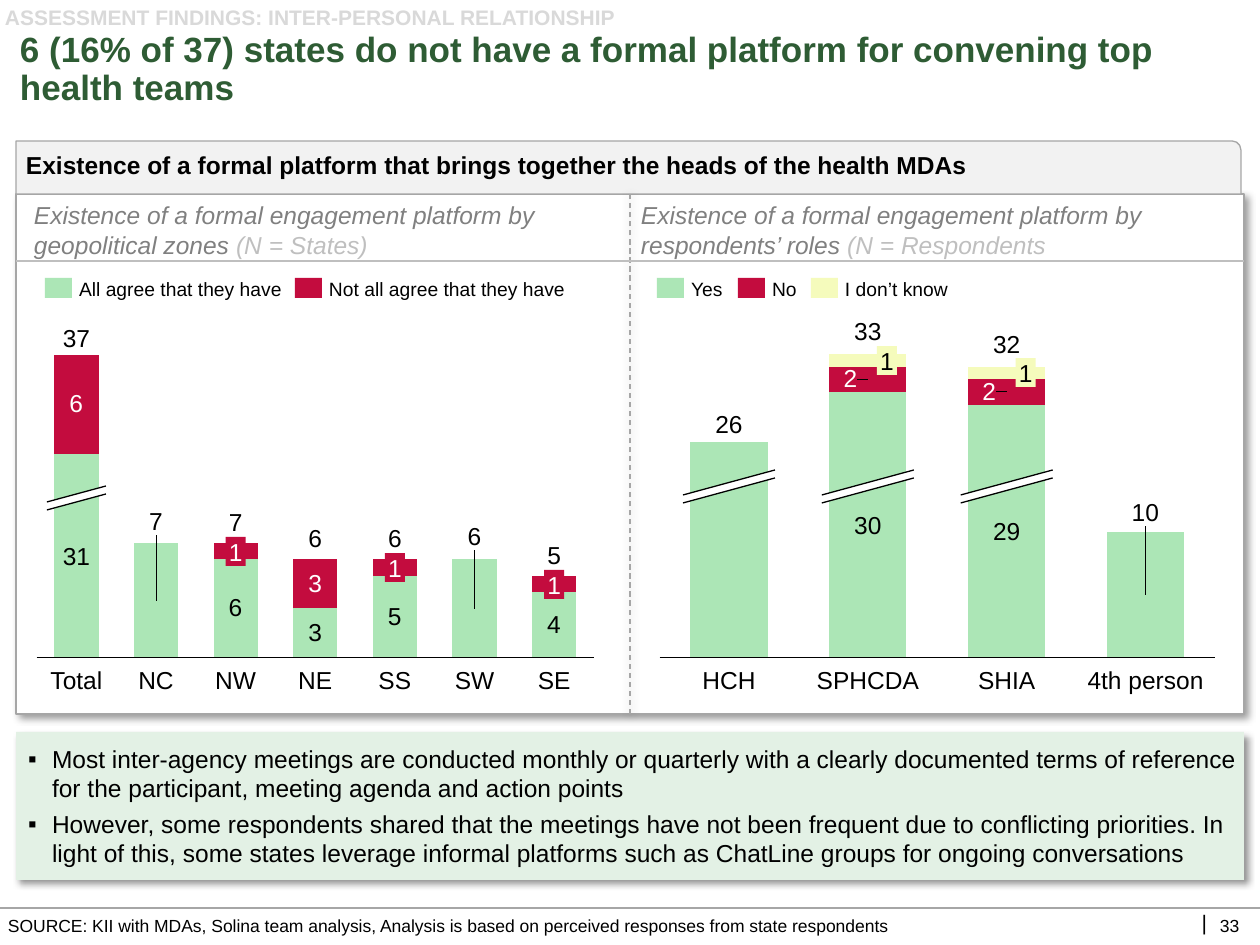
from dataclasses import dataclass

import pptx
import pptx.chart.data
import pptx.dml.color
import pptx.enum.chart
import pptx.enum.dml
import pptx.enum.shapes
import pptx.enum.text
import pptx.oxml
import pptx.oxml.ns
import pptx.util


@dataclass(frozen=True)
class Theme:
    font: str = "Arial"
    title: str = "2E5C34"
    black: str = "000000"
    white: str = "FFFFFF"
    green: str = "ACE6B6"
    red: str = "C30C3E"
    yellow: str = "F5FBBC"
    mint: str = "E3F1E5"
    header: str = "F2F2F2"
    line: str = "A6A6A6"
    pale: str = "BFBFBF"
    tag: str = "D9D9D9"
    subtitle: str = "808080"
    title_size: int = 20
    body_size: int = 14
    tag_size: int = 12
    legend_size: int = 11
    note_size: int = 10


T = Theme()
PX = 914400 / 126
SHAPES = pptx.enum.shapes.MSO_SHAPE
ANCHOR = pptx.enum.text.MSO_ANCHOR
ALIGN = pptx.enum.text.PP_ALIGN

TAG = "ASSESSMENT FINDINGS: INTER-PERSONAL RELATIONSHIP"
TITLE = "6 (16% of 37) states do not have a formal platform for convening top health teams"
HEADER = "Existence of a formal platform that brings together the heads of the health MDAs"
SOURCE = ("SOURCE: KII with MDAs, Solina team analysis, Analysis is based on "
          "perceived responses from state respondents")
BULLETS = [
    "Most inter-agency meetings are conducted monthly or quarterly with a clearly documented "
    "terms of reference for the participant, meeting agenda and action points",
    "However, some respondents shared that the meetings have not been frequent due to "
    "conflicting priorities. In light of this, some states leverage informal platforms such as "
    "ChatLine groups for ongoing conversations",
]
# Series: colour, values, labels {point: (colour, x shift, y shift)} as chart fractions.
# Notes: text, column, centre y. Chips: column, x shift, centre y.
# Breaks: columns, width, top, rise.
PANELS = [
    dict(
        subtitle=("Existence of a formal engagement platform by geopolitical zones", " (N = States)"),
        subtitle_at=(34, 200, 573, 59),
        legend=[("All agree that they have", T.green, 45), ("Not all agree that they have", T.red, 295)],
        chart_at=(25, 344, 580, 325), top=18.46,
        categories=["Total", "NC", "NW", "NE", "SS", "SW", "SE"],
        series=[
            (T.green, [12.46, 7, 6, 3, 5, 6, 4],
             {1: (T.black, 0, -0.24), 2: (T.black, 0, 0), 3: (T.black, 0, 0),
              4: (T.black, 0, 0), 5: (T.black, 0, -0.22), 6: (T.black, 0, 0)}),
            (T.red, [6, None, 1, 3, 1, None, 1], {0: (T.white, 0, 0), 3: (T.white, 0, 0)}),
        ],
        breaks=([0], 59, 486, 16),
        notes=[("37", 0, 338), ("31", 0, 556), ("7", 2, 522), ("6", 3, 538), ("6", 4, 538), ("5", 6, 555)],
        chips=[(2, 0, 551), (4, 0, 567), (6, 0, 584)], chip_colors=(T.red, T.white),
    ),
    dict(
        subtitle=("Existence of a formal engagement platform by respondents’ roles ", "(N = Respondents"),
        subtitle_at=(641, 200, 578, 59),
        legend=[("Yes", T.green, 657), ("No", T.red, 738), ("I don’t know", T.yellow, 811)],
        chart_at=(648, 343, 578, 326), top=24.14,
        categories=["HCH", "SPHCDA", "SHIA", "4th person"],
        series=[
            (T.green, [17.14, 21.14, 20.14, 10], {3: (T.black, 0, -0.25)}),
            (T.red, [None, 2, 2, None], {1: (T.white, -0.03, 0), 2: (T.white, -0.03, 0)}),
            (T.yellow, [None, 1, 1, None], {}),
        ],
        breaks=([0, 1, 2], 92, 470, 25),
        notes=[("26", 0, 424), ("33", 1, 331), ("32", 2, 344), ("30", 1, 525), ("29", 2, 531)],
        chips=[(1, 19, 360), (2, 19, 372)], chip_colors=(T.yellow, T.black),
    ),
]
PLOT = dict(x=0.02, y=0.035, w=0.961, h=0.93)


def px(*values):
    return [pptx.util.Emu(round(value * PX)) for value in values]


def rgb(value):
    return pptx.dml.color.RGBColor.from_string(value)


def xml(text):
    return pptx.oxml.parse_xml(f'<root {pptx.oxml.ns.nsdecls("a", "c")}>{text}</root>')[0]


def add_shadow(shape, blur=4, distance=3):
    shape._element.spPr.append(xml(
        f'<a:effectLst><a:outerShdw blurRad="{blur * 12700}" dist="{distance * 12700}" dir="2700000">'
        f'<a:srgbClr val="{T.black}"><a:alpha val="40000"/></a:srgbClr></a:outerShdw></a:effectLst>'))


def write(box, *paragraphs, size=T.body_size, color=T.black, bold=False, italic=False, align=ALIGN.LEFT,
          anchor=ANCHOR.MIDDLE, insets=(0, 0, 0, 0), wrap=True, bullet=None, spacing=1, before=0, after=0):
    """Fill a box; a paragraph is a string or a list of (text, colour) spans."""
    frame = box.text_frame
    frame.auto_size = pptx.enum.text.MSO_AUTO_SIZE.NONE
    frame.word_wrap, frame.vertical_anchor = wrap, anchor
    frame.margin_left, frame.margin_top, frame.margin_right, frame.margin_bottom = px(*insets)
    for index, spans in enumerate(paragraphs):
        para = frame.add_paragraph() if index else frame.paragraphs[0]
        para.alignment, para.line_spacing = align, spacing
        para.space_before = pptx.util.Pt(before if index else 0)
        para.space_after = pptx.util.Pt(after)
        if bullet:
            properties = para._p.get_or_add_pPr()
            indent = px(24)[0]
            properties.set("marL", str(indent))
            properties.set("indent", str(-indent))
            properties.append(xml(f'<a:buFont typeface="{T.font}"/>'))
            properties.append(xml(f'<a:buChar char="{bullet}"/>'))
        for text, span_color in [(spans, color)] if isinstance(spans, str) else spans:
            span = para.add_run()
            span.text = text
            span.font.name, span.font.size = T.font, pptx.util.Pt(size)
            span.font.bold, span.font.italic = bold, italic
            span.font.color.rgb = rgb(span_color)


def add_text(page, at, *paragraphs, **style):
    write(page.shapes.add_textbox(*px(*at)), *paragraphs, **style)


def paint(shape, fill, line=None):
    shape.shadow.inherit = False
    shape.fill.solid()
    shape.fill.fore_color.rgb = rgb(fill)
    if line:
        shape.line.color.rgb, shape.line.width = rgb(line), pptx.util.Pt(0.75)
    else:
        shape.line.fill.background()


def add_block(page, at, fill, line=None, kind=SHAPES.RECTANGLE):
    block = page.shapes.add_shape(kind, *px(*at))
    paint(block, fill, line)
    return block


def add_line(page, x1, y1, x2, y2, color, width=0.75, shadow=False):
    line = page.shapes.add_connector(pptx.enum.shapes.MSO_CONNECTOR.STRAIGHT, *px(x1, y1, x2, y2))
    line.line.color.rgb, line.line.width = rgb(color), pptx.util.Pt(width)
    if shadow:
        add_shadow(line, blur=5, distance=0)
    else:
        line._element.spPr.append(xml("<a:effectLst/>"))
    return line


def add_stacked_chart(page, panel):
    data = pptx.chart.data.CategoryChartData()
    data.categories = panel["categories"]
    for number, (_, values, _) in enumerate(panel["series"], 1):
        data.add_series(f"Series {number}", values)
    chart = page.shapes.add_chart(pptx.enum.chart.XL_CHART_TYPE.COLUMN_STACKED,
                                  *px(*panel["chart_at"]), data).chart
    chart.has_legend = chart.has_title = False
    chart.font.name, chart.font.size = T.font, pptx.util.Pt(T.note_size)
    chart.font.color.rgb = rgb(T.black)
    plot = chart.plots[0]
    plot.gap_width, plot.overlap, plot.vary_by_categories = 80, 100, False
    axis, scale = chart.category_axis, chart.value_axis
    axis.tick_label_position = pptx.enum.chart.XL_TICK_LABEL_POSITION.NONE
    axis.major_tick_mark = axis.minor_tick_mark = pptx.enum.chart.XL_TICK_MARK.NONE
    axis.format.line.color.rgb, axis.format.line.width = rgb(T.black), pptx.util.Pt(1)
    scale.minimum_scale, scale.maximum_scale = 0, panel["top"]
    scale.has_major_gridlines = scale.visible = False
    area = chart._chartSpace.chart.plotArea
    for old in area.findall(pptx.oxml.ns.qn("c:layout")):
        area.remove(old)
    sizes = "".join(f'<c:{key} val="{value}"/>' for key, value in PLOT.items())
    area.insert(0, xml('<c:layout><c:manualLayout><c:layoutTarget val="inner"/><c:xMode val="edge"/>'
                       f'<c:yMode val="edge"/>{sizes}</c:manualLayout></c:layout>'))
    for series, (color, _, labels) in zip(plot.series, panel["series"]):
        series.format.fill.solid()
        series.format.fill.fore_color.rgb = rgb(color)
        for point, (label_color, dx, dy) in labels.items():
            font = series.points[point].data_label.font
            font.name, font.size = T.font, pptx.util.Pt(T.body_size)
            font.color.rgb = rgb(label_color)
            if dx or dy:
                label = series._element.xpath(f"c:dLbls/c:dLbl[c:idx/@val='{point}']")[0]
                label.insert(1, xml(f'<c:layout><c:manualLayout><c:x val="{dx}"/><c:y val="{dy}"/>'
                                    '</c:manualLayout></c:layout>'))


def add_break(page, center, width, top, rise, gap=8):
    """Draw the slanted cut through a shortened column."""
    left, right = center - width / 2, center + width / 2
    outline = page.shapes.build_freeform(*px(left, top + rise), scale=1.0)
    outline.add_line_segments([px(right, top), px(right, top + gap), px(left, top + rise + gap)], close=True)
    paint(outline.convert_to_shape(), T.white)
    for shift in (0, gap):
        add_line(page, left, top + rise + shift, right, top + shift, T.black)


def add_panel(page, panel):
    name, count = panel["subtitle"]
    add_text(page, panel["subtitle_at"], [(name, T.subtitle), (count, T.pale)], italic=True)
    add_stacked_chart(page, panel)
    left, _, width, _ = panel["chart_at"]
    pitch = width * PLOT["w"] / len(panel["categories"])
    centers = [left + width * PLOT["x"] + pitch * (i + 0.5) for i in range(len(panel["categories"]))]
    columns, cut_width, top, rise = panel["breaks"]
    for column in columns:
        add_break(page, centers[column], cut_width, top, rise)
    labels = panel["notes"] + [(text, i, 680) for i, text in enumerate(panel["categories"])]
    for text, column, y in labels:
        add_text(page, (centers[column] - 60, y - 15, 120, 30), text, align=ALIGN.CENTER, wrap=False)
    fill, color = panel["chip_colors"]
    for column, shift, y in panel["chips"]:
        chip = add_block(page, (centers[column] + shift - 10, y - 14, 20, 29), fill)
        write(chip, "1", color=color, align=ALIGN.CENTER, wrap=False)
    for text, swatch, x in panel["legend"]:
        add_block(page, (x, 278, 27, 20), swatch)
        add_text(page, (x + 34, 278, 235, 22), text, size=T.legend_size, wrap=False)


def main():
    deck = pptx.Presentation()
    deck.slide_width, deck.slide_height = px(1260, 945)
    page = deck.slides.add_slide(deck.slide_layouts[1])
    title, body = page.placeholders
    title.left, title.top, title.width, title.height = px(11, 32, 1249, 77)
    write(title, TITLE, size=T.title_size, color=T.title, bold=True, spacing=0.9, insets=(9, 5, 9, 5))
    body.left, body.top, body.width, body.height = px(16, 732, 1228, 148)
    body.fill.solid()
    body.fill.fore_color.rgb = rgb(T.mint)
    add_shadow(body)
    write(body, *BULLETS, anchor=ANCHOR.TOP, insets=(12, 12, 0, 10), bullet="▪", before=1.5, after=2)

    add_text(page, (-5, 5, 1220, 25), TAG, size=T.tag_size, color=T.tag, bold=True,
             anchor=ANCHOR.TOP, insets=(10, 0, 0, 0))
    frame = add_block(page, (16, 194, 1228, 520), T.white, T.line)
    frame._element.spPr.remove(frame._element.spPr.find(pptx.oxml.ns.qn("a:effectLst")))
    add_shadow(frame)
    header = add_block(page, (16, 141, 1225, 53), T.header, T.line, SHAPES.ROUND_1_RECTANGLE)
    write(header, HEADER, bold=True, insets=(10, 0, 5, 5))
    divider = add_line(page, 630, 714, 630, 194, T.line, shadow=True)
    divider.line.dash_style = pptx.enum.dml.MSO_LINE.DASH
    divider.begin_connect(frame, 2)
    divider.end_connect(frame, 0)
    for panel in PANELS:
        add_panel(page, panel)
    add_line(page, 16, 261, 1244, 261, T.pale)

    add_line(page, 0, 908, 1260, 908, T.line, width=1)
    add_text(page, (8, 915, 939, 22), SOURCE, size=T.note_size, anchor=ANCHOR.TOP)
    add_text(page, (1202, 910, 5, 25), "|", size=T.tag_size, align=ALIGN.RIGHT, wrap=False)
    add_text(page, (1220, 915, 26, 22), "33", size=T.note_size, anchor=ANCHOR.TOP, wrap=False)
    deck.save("out.pptx")


if __name__ == "__main__":
    main()
